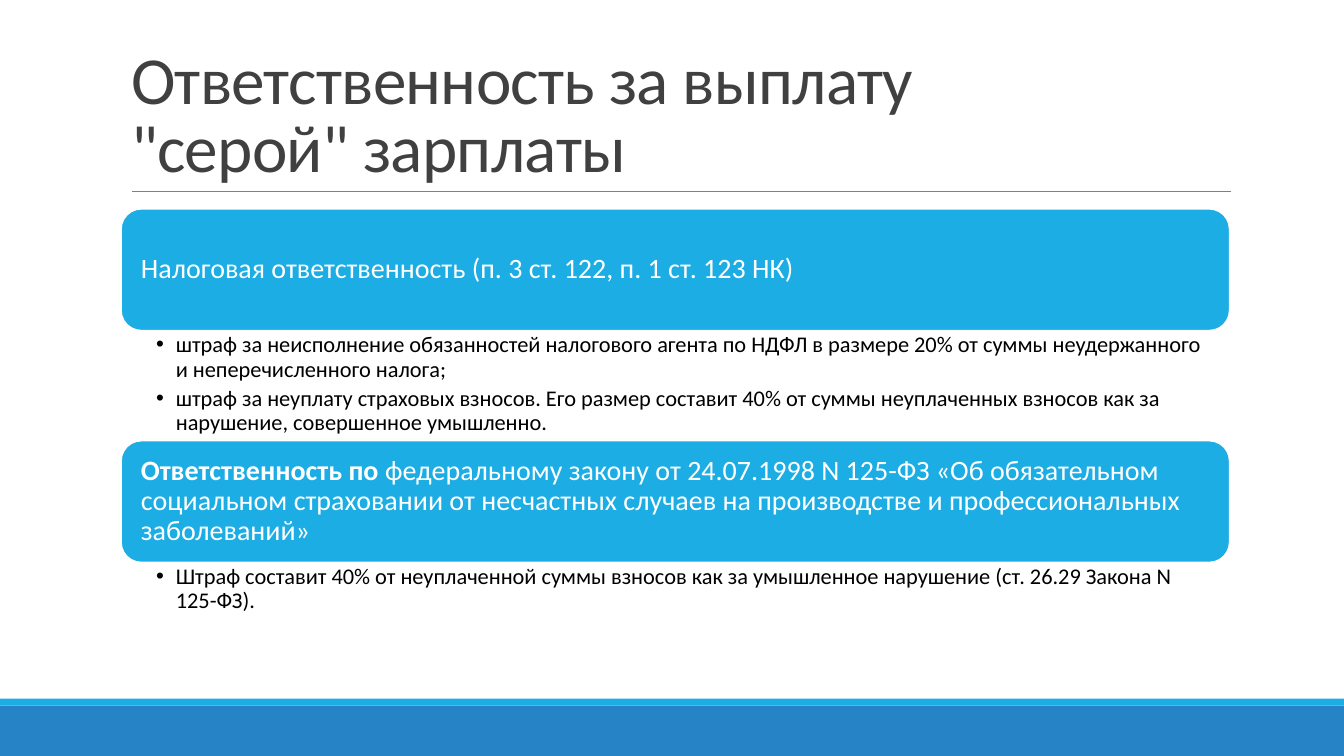
import dataclasses
import typing

import pptx
import pptx.dml.color
import pptx.enum.shapes
import pptx.enum.text
import pptx.oxml.xmlchemy
import pptx.util
from lxml import etree
from pptx.oxml.ns import qn

Pt = pptx.util.Pt
RGBColor = pptx.dml.color.RGBColor
Anchor = pptx.enum.text.MSO_ANCHOR
ShapeKind = pptx.enum.shapes.MSO_SHAPE


@dataclasses.dataclass(frozen=True)
class Theme:
    font: str = "Calibri"
    accent: str = "1CADE4"
    band: str = "2683C6"
    rule: str = "808080"
    title: str = "404040"
    text: str = "000000"
    light: str = "FFFFFF"
    title_size: float = 48
    header_size: float = 20
    list_size: float = 16


@dataclasses.dataclass(frozen=True)
class Box:
    left: float
    top: float
    width: float
    height: float

    def in_points(self) -> dict[str, int]:
        return {name: Pt(value) for name, value in dataclasses.asdict(self).items()}


@dataclasses.dataclass(frozen=True)
class Section:
    bold_lead: str
    header: str
    items: tuple[str, ...]
    list_height: float


THEME = Theme()
SLIDE_WIDTH, SLIDE_HEIGHT = 960, 540
CONTENT_LEFT, CONTENT_WIDTH = 86.4, 792
SECTIONS_TOP, HEADER_HEIGHT = 149.1, 87.1
LIST_INDENT = 14

TITLE = 'Ответственность за выплату \v"серой" зарплаты'
SECTIONS = (
    Section(
        "",
        "Налоговая ответственность (п. 3 ст. 122, п. 1 ст. 123 НК)",
        (
            "штраф за неисполнение обязанностей налогового агента по НДФЛ в размере 20% "
            "от суммы неудержанного и неперечисленного налога;",
            "штраф за неуплату страховых взносов. Его размер составит 40% от суммы "
            "неуплаченных взносов как за нарушение, совершенное умышленно.",
        ),
        78.5,
    ),
    Section(
        "Ответственность по ",
        "федеральному закону от 24.07.1998 N 125-ФЗ «Об обязательном социальном "
        "страховании от несчастных случаев на производстве и профессиональных заболеваний»",
        (
            "Штраф составит 40% от неуплаченной суммы взносов как за умышленное нарушение "
            "(ст. 26.29 Закона N 125-ФЗ).",
        ),
        56.9,
    ),
)


def apply(target: typing.Any, values: dict[str, typing.Any]) -> None:
    for name, value in values.items():
        setattr(target, name, value)


def format_frame(frame: typing.Any, anchor: typing.Any, insets: tuple[float, ...]) -> None:
    left, top, right, bottom = map(Pt, insets)
    apply(frame, {
        "word_wrap": True, "auto_size": pptx.enum.text.MSO_AUTO_SIZE.NONE,
        "vertical_anchor": anchor, "margin_left": left, "margin_top": top,
        "margin_right": right, "margin_bottom": bottom,
    })


def format_paragraph(paragraph: typing.Any, line_spacing: float, after: float = 0) -> None:
    apply(paragraph, {
        "alignment": pptx.enum.text.PP_ALIGN.LEFT, "line_spacing": line_spacing,
        "space_before": Pt(0), "space_after": Pt(after),
    })


def format_run(run: typing.Any, size: float, color: str, bold: bool = False) -> None:
    apply(run.font, {"name": THEME.font, "size": Pt(size), "bold": bold})
    run.font.color.rgb = RGBColor.from_string(color)


def add_block(slide: typing.Any, kind: typing.Any, box: Box, fill: str) -> typing.Any:
    shape = slide.shapes.add_shape(kind, *box.in_points().values())
    shape.shadow.inherit = False
    shape.fill.solid()
    shape.fill.fore_color.rgb = RGBColor.from_string(fill)
    shape.line.fill.background()
    return shape


def add_rule(slide: typing.Any, left: float, right: float, top: float) -> None:
    rule = slide.shapes.add_connector(
        pptx.enum.shapes.MSO_CONNECTOR.STRAIGHT, Pt(left), Pt(top), Pt(right), Pt(top))
    rule.line.color.rgb = RGBColor.from_string(THEME.rule)
    rule.line.width = Pt(0.5)
    etree.SubElement(rule.element.spPr, qn("a:effectLst"))


def fill_title(title: typing.Any) -> None:
    apply(title, Box(CONTENT_LEFT, 22.3, CONTENT_WIDTH, 114.5).in_points())
    format_frame(title.text_frame, Anchor.BOTTOM, (7.2, 3.6, 7.2, 3.6))
    title.text_frame.text = TITLE
    paragraph = title.text_frame.paragraphs[0]
    format_paragraph(paragraph, 0.85)
    for run in paragraph.runs:
        format_run(run, THEME.title_size, THEME.title)
        run.font._element.set("spc", "-50")


def add_header(slide: typing.Any, section: Section, top: float) -> None:
    box = Box(CONTENT_LEFT, top, CONTENT_WIDTH, HEADER_HEIGHT)
    shape = add_block(slide, ShapeKind.ROUNDED_RECTANGLE, box, THEME.accent)
    shape.line.color.rgb = RGBColor.from_string(THEME.light)
    shape.line.width = Pt(1.25)
    format_frame(shape.text_frame, Anchor.MIDDLE, (10, 10, 10, 10))
    paragraph = shape.text_frame.paragraphs[0]
    format_paragraph(paragraph, 0.9)
    for text, bold in ((section.bold_lead, True), (section.header, False)):
        if text:
            run = paragraph.add_run()
            run.text = text
            format_run(run, THEME.header_size, THEME.light, bold)


def fill_list(body: typing.Any, section: Section, top: float) -> None:
    apply(body, Box(CONTENT_LEFT, top, CONTENT_WIDTH, section.list_height).in_points())
    format_frame(body.text_frame, Anchor.TOP, (25.2, 2, 11.4, 2))
    body.text_frame.text = "\n".join(section.items)
    for paragraph in body.text_frame.paragraphs:
        format_paragraph(paragraph, 0.9, after=4)
        format_run(paragraph.runs[0], THEME.list_size, THEME.text)
        properties = paragraph._p.get_or_add_pPr()
        properties.set("marL", str(Pt(LIST_INDENT)))
        properties.set("indent", str(-Pt(LIST_INDENT)))
        etree.SubElement(properties, qn("a:buChar")).set("char", "•")


def main() -> None:
    presentation = pptx.Presentation()
    apply(presentation, {"slide_width": Pt(SLIDE_WIDTH), "slide_height": Pt(SLIDE_HEIGHT)})
    # The two-content layout gives a title and one body for each section
    slide = presentation.slides.add_slide(presentation.slide_layouts[3])
    title, *bodies = slide.placeholders

    # Footer bands and title rule
    add_block(slide, ShapeKind.RECTANGLE, Box(0, 504, SLIDE_WIDTH, 36), THEME.band)
    add_block(slide, ShapeKind.RECTANGLE, Box(0, 499, SLIDE_WIDTH, 5), THEME.accent)
    add_rule(slide, 94.3, 879, 136.8)

    # Title and stacked sections
    fill_title(title)
    top = SECTIONS_TOP
    for section, body in zip(SECTIONS, bodies):
        add_header(slide, section, top)
        fill_list(body, section, top + HEADER_HEIGHT)
        top += HEADER_HEIGHT + section.list_height

    presentation.save("out.pptx")


if __name__ == "__main__":
    main()
